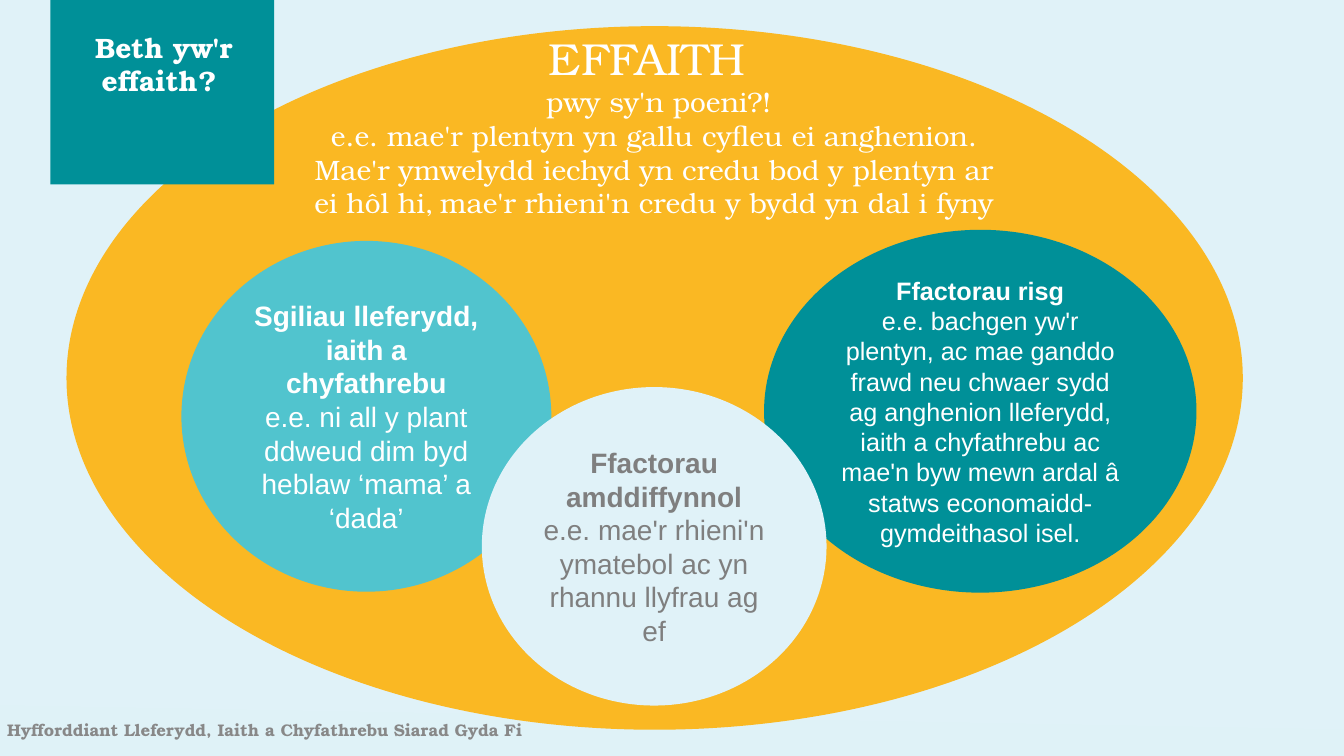
import pptx
import pptx.util
import pptx.dml.color
import pptx.enum.shapes
import pptx.enum.text

Pt = pptx.util.Pt
MSO = pptx.enum.shapes.MSO_SHAPE
ALIGN = pptx.enum.text.PP_ALIGN
ANCHOR = pptx.enum.text.MSO_ANCHOR

PALE, FOOT, AMBER, TEAL, AQUA = "E0F2F8", "DFF2F7", "FAB823", "009098", "51C4CE"
WHITE, GREY, FOOT_GREY = "FFFFFF", "7F7F7F", "888888"
SERIF, SANS = "TeX Gyre Bonum", "Arial"
WIDTH, HEIGHT = 960, 540

BAND = [(0, 504), (0, 540), (960, 540), (960, 521.28)]
OUTER = (47.52, 18.72, 840.24, 502.56)
TAB = (36, 0, 159.84, 131.76)

CIRCLES = [
    ((545.76, 164.16, 308.88, 259.2), TEAL, WHITE, 18, "Ffactorau risg",
     "e.e. bachgen yw'r plentyn, ac mae ganddo frawd neu chwaer sydd ag anghenion "
     "lleferydd, iaith a chyfathrebu ac mae'n byw mewn ardal â statws "
     "economaidd-gymdeithasol isel."),
    ((129.6, 172.08, 264.24, 250.56), AQUA, WHITE, 20,
     "Sgiliau lleferydd, iaith a chyfathrebu",
     "e.e. ni all y plant ddweud dim byd heblaw ‘mama’ a ‘dada’"),
    ((344.16, 276.48, 246.24, 227.52), PALE, GREY, 20, "Ffactorau amddiffynnol",
     "e.e. mae'r rhieni'n ymatebol ac yn rhannu llyfrau ag ef"),
]

IMPACT = dict(size=20, name=SERIF, color=WHITE, bold=False)
IMPACT_BOX = (213.84, 18.72, 506.88, 162.72)
IMPACT_TEXT = [
    [("EFFAITH ", {**IMPACT, "size": 32})],
    [(" pwy sy'n poeni?!", IMPACT)],
    [("e.e. mae'r plentyn yn gallu cyfleu ei anghenion. Mae'r ymwelydd iechyd yn "
      "credu bod y plentyn ar ei hôl hi,", IMPACT),
     (" ", dict(size=16, name=SANS, color="000000", bold=False)),
     ("mae'r rhieni'n credu y bydd yn dal i fyny", IMPACT)],
]

TITLE_BOX = (36, 21.6, 162, 110.16)
TITLE = [[("Beth yw'r effaith? ", {**IMPACT, "bold": True})]]

FOOTER_BOX = (5.04, 514.08, 616.32, 14.4)
FOOTER = [[("Hyfforddiant Lleferydd, Iaith a Chyfathrebu Siarad Gyda Fi",
            dict(size=12, name=SERIF, color=FOOT_GREY, bold=True))]]


def paint(fill, color):
    fill.solid()
    fill.fore_color.rgb = pptx.dml.color.RGBColor.from_string(color)


def finish(sp, color):
    sp.shadow.inherit = False
    paint(sp.fill, color)
    sp.line.fill.background()


def add_shape(s, kind, box, color):
    sp = s.shapes.add_shape(kind, *map(Pt, box))
    finish(sp, color)
    return sp


def write(sp, paragraphs, align=ALIGN.CENTER, anchor=ANCHOR.TOP, inset=(7.2, 3.6)):
    tf = sp.text_frame
    x, y = map(Pt, inset)
    frame = dict(word_wrap=True, vertical_anchor=anchor, margin_left=x,
                 margin_right=x, margin_top=y, margin_bottom=y)
    for key, value in frame.items():
        setattr(tf, key, value)
    for i, runs in enumerate(paragraphs):
        p = tf.paragraphs[0] if i == 0 else tf.add_paragraph()
        p.alignment = align
        for text, fmt in runs:
            r = p.add_run()
            r.text = text
            for key, value in fmt.items():
                if key == "color":
                    paint(r.font.fill, value)
                else:
                    setattr(r.font, key, Pt(value) if key == "size" else value)


def add_text(s, box, paragraphs, **options):
    write(s.shapes.add_textbox(*map(Pt, box)), paragraphs, **options)


def main():
    prs = pptx.Presentation()
    prs.slide_width, prs.slide_height = Pt(WIDTH), Pt(HEIGHT)
    s = prs.slides.add_slide(prs.slide_layouts[6])
    paint(s.background.fill, PALE)

    band = s.shapes.build_freeform(Pt(BAND[0][0]), Pt(BAND[0][1]))
    band.add_line_segments([(Pt(x), Pt(y)) for x, y in BAND[1:]], close=True)
    finish(band.convert_to_shape(), FOOT)

    add_shape(s, MSO.OVAL, OUTER, AMBER)
    for box, fill, color, size, heading, example in CIRCLES:
        fmt = dict(size=size, name=SANS, color=color)
        write(add_shape(s, MSO.OVAL, box, fill),
              [[(heading, {**fmt, "bold": True})], [(example, {**fmt, "bold": False})]],
              anchor=ANCHOR.MIDDLE)

    add_text(s, IMPACT_BOX, IMPACT_TEXT)
    add_shape(s, MSO.RECTANGLE, TAB, TEAL)
    add_text(s, TITLE_BOX, TITLE, inset=(0, 0))
    add_text(s, FOOTER_BOX, FOOTER, align=ALIGN.LEFT, inset=(0, 0))
    prs.save("out.pptx")


if __name__ == "__main__":
    main()
